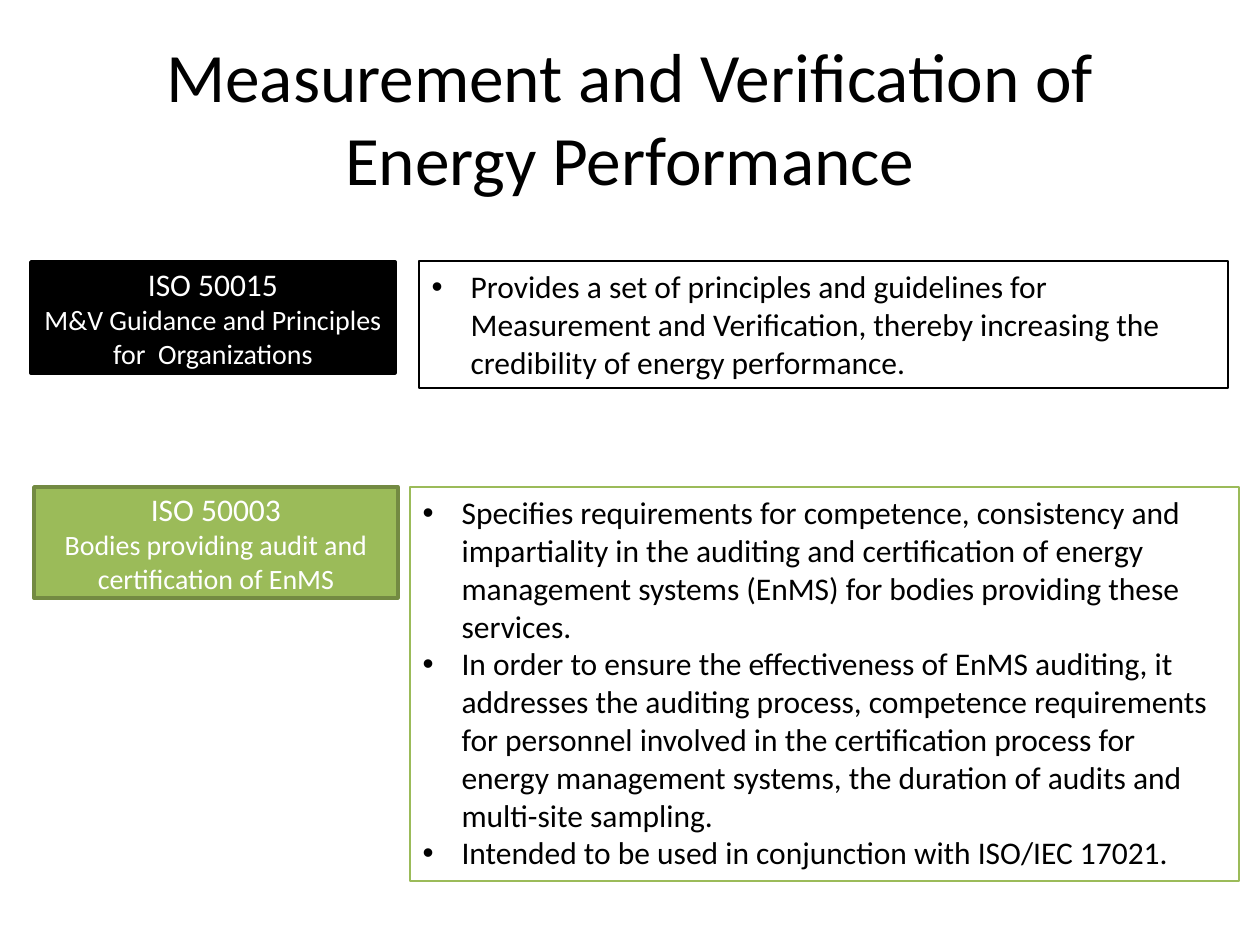
import pptx
import pptx.util
import pptx.dml.color
import pptx.enum.shapes
import pptx.enum.text
import pptx.oxml.ns
import lxml.etree
from dataclasses import dataclass


@dataclass(frozen=True)
class Theme:
    """Colours, font and type sizes of the slide."""
    font: str = "Calibri"
    black: str = "000000"
    white: str = "FFFFFF"
    green: str = "9BBB59"
    olive: str = "738A42"
    title: float = 39.6
    text: float = 18
    small: float = 16
    thick: float = 2
    thin: float = 0.75


THEME = Theme()
SCALE = 914400 / 126
INDENT = 39
TEXT = pptx.enum.text


def px(count):
    """Turn whole pixels into EMU."""
    return pptx.util.Emu(round(count * SCALE))


def tint(name):
    """Give the colour for a hex name."""
    return pptx.dml.color.RGBColor.from_string(name)


def place(shape, box):
    """Move and size a shape."""
    shape.left, shape.top, shape.width, shape.height = map(px, box)


def border(shape, hue, width):
    """Draw the outline of a shape."""
    shape.line.color.rgb = tint(hue)
    shape.line.width = pptx.util.Pt(width)


def write(frame, lines, hue, align, anchor):
    """Fill a fixed frame with one paragraph for each text and size."""
    frame.word_wrap = True
    frame.auto_size = TEXT.MSO_AUTO_SIZE.NONE
    frame.vertical_anchor = anchor
    for index, (words, size) in enumerate(lines):
        para = frame.add_paragraph() if index else frame.paragraphs[0]
        para.alignment = align
        para.space_before = pptx.util.Pt(0)
        run = para.add_run()
        run.text = words
        run.font.name = THEME.font
        run.font.size = pptx.util.Pt(size)
        run.font.color.rgb = tint(hue)


def bullet(para):
    """Give a paragraph a hanging bullet."""
    props = para._p.get_or_add_pPr()
    props.set("marL", str(px(INDENT)))
    props.set("indent", str(-px(INDENT)))
    for tag, key, value in (("a:buFont", "typeface", "Arial"),
                            ("a:buChar", "char", "•")):
        lxml.etree.SubElement(props, pptx.oxml.ns.qn(tag)).set(key, value)


def head(shape, words):
    """Set the slide title."""
    place(shape, (63, 38, 1134, 157))
    write(shape.text_frame, [(words, THEME.title)], THEME.black,
          TEXT.PP_ALIGN.CENTER, TEXT.MSO_ANCHOR.MIDDLE)


def label(slide, spot, code, name, fill, edge):
    """Add a filled box that names a standard."""
    kind = pptx.enum.shapes.MSO_SHAPE.RECTANGLE
    shape = slide.shapes.add_shape(kind, 0, 0, 0, 0)
    place(shape, (*spot, 364, 111))
    shape.shadow.inherit = False
    shape.fill.solid()
    shape.fill.fore_color.rgb = tint(fill)
    border(shape, edge, THEME.thick)
    write(shape.text_frame, [(code, THEME.text), (name, THEME.small)],
          THEME.white, TEXT.PP_ALIGN.CENTER, TEXT.MSO_ANCHOR.MIDDLE)


def notes(shape, box, items, edge):
    """Set an outlined bullet list."""
    place(shape, box)
    border(shape, edge, THEME.thin)
    frame = shape.text_frame
    write(frame, [(item, THEME.text) for item in items], THEME.black,
          TEXT.PP_ALIGN.LEFT, TEXT.MSO_ANCHOR.TOP)
    for para in frame.paragraphs:
        bullet(para)


def main():
    """Build the slide and save it."""
    deck = pptx.Presentation()
    deck.slide_width, deck.slide_height = px(1260), px(945)
    slide = deck.slides.add_slide(deck.slide_layouts.get_by_name("Two Content"))
    title, first, second = list(slide.placeholders)[:3]
    head(title, "Measurement and Verification of Energy Performance")
    label(slide, (31, 262), "ISO 50015",
          "M&V Guidance and Principles for  Organizations",
          THEME.black, THEME.black)
    label(slide, (34, 487), "ISO 50003",
          "Bodies providing audit and certification of EnMS",
          THEME.green, THEME.olive)
    notes(first, (419, 261, 809, 127), [
        "Provides a set of principles and guidelines for Measurement and "
        "Verification, thereby increasing the credibility of energy "
        "performance.",
    ], THEME.black)
    notes(second, (410, 487, 829, 394), [
        "Specifies requirements for competence, consistency and impartiality "
        "in the auditing and certification of energy management systems "
        "(EnMS) for bodies providing these services.",
        "In order to ensure the effectiveness of EnMS auditing, it addresses "
        "the auditing process, competence requirements for personnel involved "
        "in the certification process for energy management systems, the "
        "duration of audits and multi-site sampling.",
        "Intended to be used in conjunction with ISO/IEC 17021.",
    ], THEME.green)
    deck.save("out.pptx")


if __name__ == "__main__":
    main()
